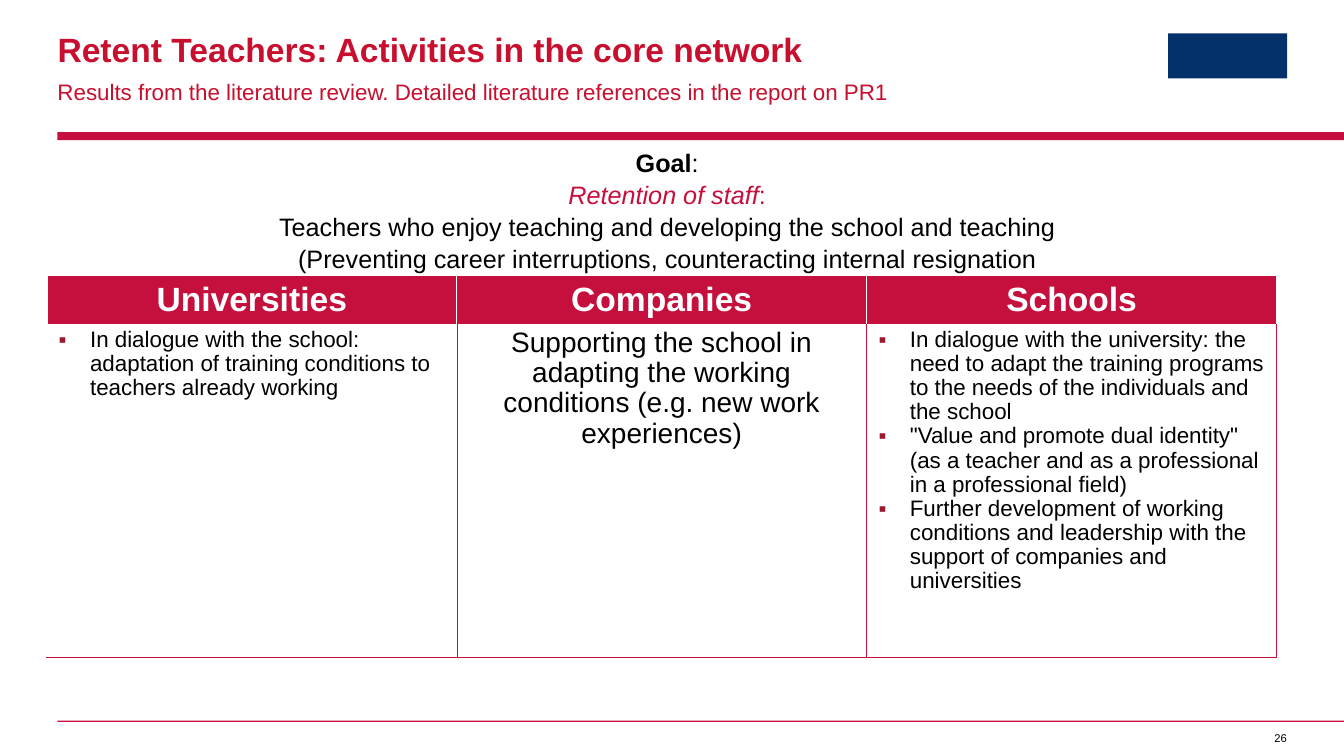
from lxml.etree import SubElement
from pptx import Presentation
from pptx.dml.color import RGBColor
from pptx.enum.shapes import MSO_SHAPE
from pptx.enum.text import MSO_ANCHOR, PP_ALIGN
from pptx.oxml import parse_xml
from pptx.oxml.ns import nsdecls, qn
from pptx.util import Cm, Pt

FONT = "Arial"
RED = "C50F3C"
TITLE_RED = "C80F2E"
BULLET_RED = "971B2F"
NAVY = "04316A"
BLACK = "000000"
WHITE = "FFFFFF"

LEFT = 1.45
BAR_WIDTH = 32.42
COLUMN_WIDTH = 10.33
HEADER_HEIGHT = 1.17
BODY_HEIGHT = 8.38

COLUMNS = [
    ("Universities", True, [
        "In dialogue with the school: adaptation of training conditions to teachers already working",
    ]),
    ("Companies", False, [
        "Supporting the school in adapting the working conditions (e.g. new work experiences)",
    ]),
    ("Schools", True, [
        "In dialogue with the university: the need to adapt the training programs "
        "to the needs of the individuals and the school",
        "\"Value and promote dual identity\" (as a teacher and as a professional "
        "in a professional field)",
        "Further development of working conditions and leadership with the support "
        "of companies and universities",
    ]),
]


def color(hex_code):
    return RGBColor.from_string(hex_code)


def format_run(run, size, hex_code, bold=False, italic=False):
    font = run.font
    font.name = FONT
    font.size = Pt(size)
    font.bold = bold
    font.italic = italic
    font.color.rgb = color(hex_code)


def format_paragraph(paragraph, size, hex_code, bold=False, alignment=PP_ALIGN.LEFT, spacing=1.0):
    paragraph.alignment = alignment
    paragraph.line_spacing = spacing
    for run in paragraph.runs:
        format_run(run, size, hex_code, bold)


def add_block(slide, left, top, width, height, hex_code):
    shape = slide.shapes.add_shape(
        MSO_SHAPE.RECTANGLE, Cm(left), Cm(top), Cm(width), Cm(height))
    shape.shadow.inherit = False
    shape.fill.solid()
    shape.fill.fore_color.rgb = color(hex_code)
    shape.line.fill.background()


def set_margins(text_frame, left=0, top=0, right=0, bottom=0):
    text_frame.margin_left, text_frame.margin_right = Cm(left), Cm(right)
    text_frame.margin_top, text_frame.margin_bottom = Cm(top), Cm(bottom)


def add_text_frame(slide, left, top, width, height, wrap=True):
    box = slide.shapes.add_textbox(Cm(left), Cm(top), Cm(width), Cm(height))
    box.text_frame.word_wrap = wrap
    return box.text_frame


def add_title(slide, text):
    title = slide.shapes.title
    title.left, title.top, title.width, title.height = Cm(LEFT), Cm(0.84), Cm(22.8), Cm(0.91)
    text_frame = title.text_frame
    text_frame.text = text
    text_frame.vertical_anchor = MSO_ANCHOR.TOP
    set_margins(text_frame)
    format_paragraph(text_frame.paragraphs[0], 24, TITLE_RED, bold=True, spacing=0.9)


def add_subtitle(slide, text):
    text_frame = add_text_frame(slide, LEFT, 1.9, 23.7, 0.69)
    set_margins(text_frame, right=1)
    text_frame.text = text
    format_paragraph(text_frame.paragraphs[0], 16, TITLE_RED, spacing=1.1)


def add_goal(slide):
    text_frame = add_text_frame(slide, LEFT, 3.56, 30.73, 3.33)
    heading = text_frame.paragraphs[0]
    statement = text_frame.add_paragraph()
    for paragraph in (heading, statement):
        format_paragraph(paragraph, 18, BLACK, alignment=PP_ALIGN.CENTER, spacing=1.05)
    pieces = [
        (heading, "Goal", BLACK, True, False),
        (heading, ":", BLACK, False, False),
        (statement, "Retention of staff", RED, False, True),
        (statement, ":\n", RED, False, False),
        (statement, "Teachers who enjoy teaching and developing the school and teaching\n"
                    "(Preventing career interruptions, counteracting internal resignation",
         BLACK, False, False),
    ]
    for paragraph, text, hex_code, bold, italic in pieces:
        for index, line in enumerate(text.split("\n")):
            if index:
                paragraph.add_line_break()
            if line:
                run = paragraph.add_run()
                run.text = line
                format_run(run, 18, hex_code, bold, italic)


def add_slide_number(slide, number):
    text_frame = add_text_frame(slide, 31.9, 18.44, 0.53, 0.33, wrap=False)
    set_margins(text_frame)
    paragraph = text_frame.paragraphs[0]
    paragraph.text = number
    format_paragraph(paragraph, 8, BLACK, alignment=PP_ALIGN.RIGHT)


def add_bullet(paragraph):
    properties = paragraph._p.get_or_add_pPr()
    properties.set("marL", str(Cm(0.79)))
    properties.set("indent", str(-Cm(0.79)))
    bullet_color = SubElement(properties, qn("a:buClr"))
    SubElement(bullet_color, qn("a:srgbClr"), val=BULLET_RED)
    SubElement(properties, qn("a:buFont"), typeface=FONT)
    SubElement(properties, qn("a:buChar"), char="▪")


def set_borders(cell, borders):
    """Draw (side, colour, points) borders, listed in the order L, R, T, B."""
    properties = cell._tc.get_or_add_tcPr()
    for position, (side, hex_code, points) in enumerate(borders):
        properties.insert(position, parse_xml(
            f'<a:ln{side} {nsdecls("a")} w="{Pt(points)}"><a:solidFill>'
            f'<a:srgbClr val="{hex_code}"/></a:solidFill></a:ln{side}>'))


def fill_header_cell(cell, text):
    cell.text_frame.text = text
    cell.vertical_anchor = MSO_ANCHOR.MIDDLE
    cell.fill.solid()
    cell.fill.fore_color.rgb = color(RED)
    format_paragraph(cell.text_frame.paragraphs[0], 24, WHITE, True, PP_ALIGN.CENTER)
    set_borders(cell, [("L", WHITE, 0.5), ("R", WHITE, 0.5), ("T", WHITE, 1)])


def fill_body_cell(cell, entries, bulleted, left_border):
    cell.text_frame.text = "\n".join(entries)
    cell.fill.background()
    for paragraph in cell.text_frame.paragraphs:
        if bulleted:
            add_bullet(paragraph)
            format_paragraph(paragraph, 16, BLACK, spacing=0.97)
        else:
            format_paragraph(paragraph, 20, BLACK, alignment=PP_ALIGN.CENTER, spacing=0.97)
    set_borders(cell, [left_border, ("R", RED, 0.25), ("B", RED, 0.25)])


def add_activity_table(slide):
    table = slide.shapes.add_table(
        2, len(COLUMNS), Cm(1.18), Cm(6.95),
        Cm(COLUMN_WIDTH * len(COLUMNS)), Cm(HEADER_HEIGHT + BODY_HEIGHT)).table
    table.horz_banding = False
    table.rows[0].height, table.rows[1].height = Cm(HEADER_HEIGHT), Cm(BODY_HEIGHT)
    for index, (heading, bulleted, entries) in enumerate(COLUMNS):
        table.columns[index].width = Cm(COLUMN_WIDTH)
        header, body = table.cell(0, index), table.cell(1, index)
        for cell in (header, body):
            set_margins(cell, 0.3, 0.1, 0.3, 0.1)
        fill_header_cell(header, heading)
        left_border = ("L", RED, 0.25) if index else ("L", WHITE, 1)
        fill_body_cell(body, entries, bulleted, left_border)


def main():
    presentation = Presentation()
    presentation.slide_width, presentation.slide_height = Cm(33.87), Cm(19.05)
    slide = presentation.slides.add_slide(presentation.slide_layouts[5])
    add_block(slide, LEFT, 3.33, BAR_WIDTH, 0.2, RED)
    add_block(slide, LEFT, 18.16, BAR_WIDTH, 0.03, RED)
    add_block(slide, 29.44, 0.84, 3, 1.14, NAVY)
    add_title(slide, "Retent Teachers: Activities in the core network")
    add_subtitle(slide, "Results from the literature review. Detailed literature references "
                        "in the report on PR1")
    add_goal(slide)
    add_activity_table(slide)
    add_slide_number(slide, "26")
    presentation.save("out.pptx")


if __name__ == "__main__":
    main()
